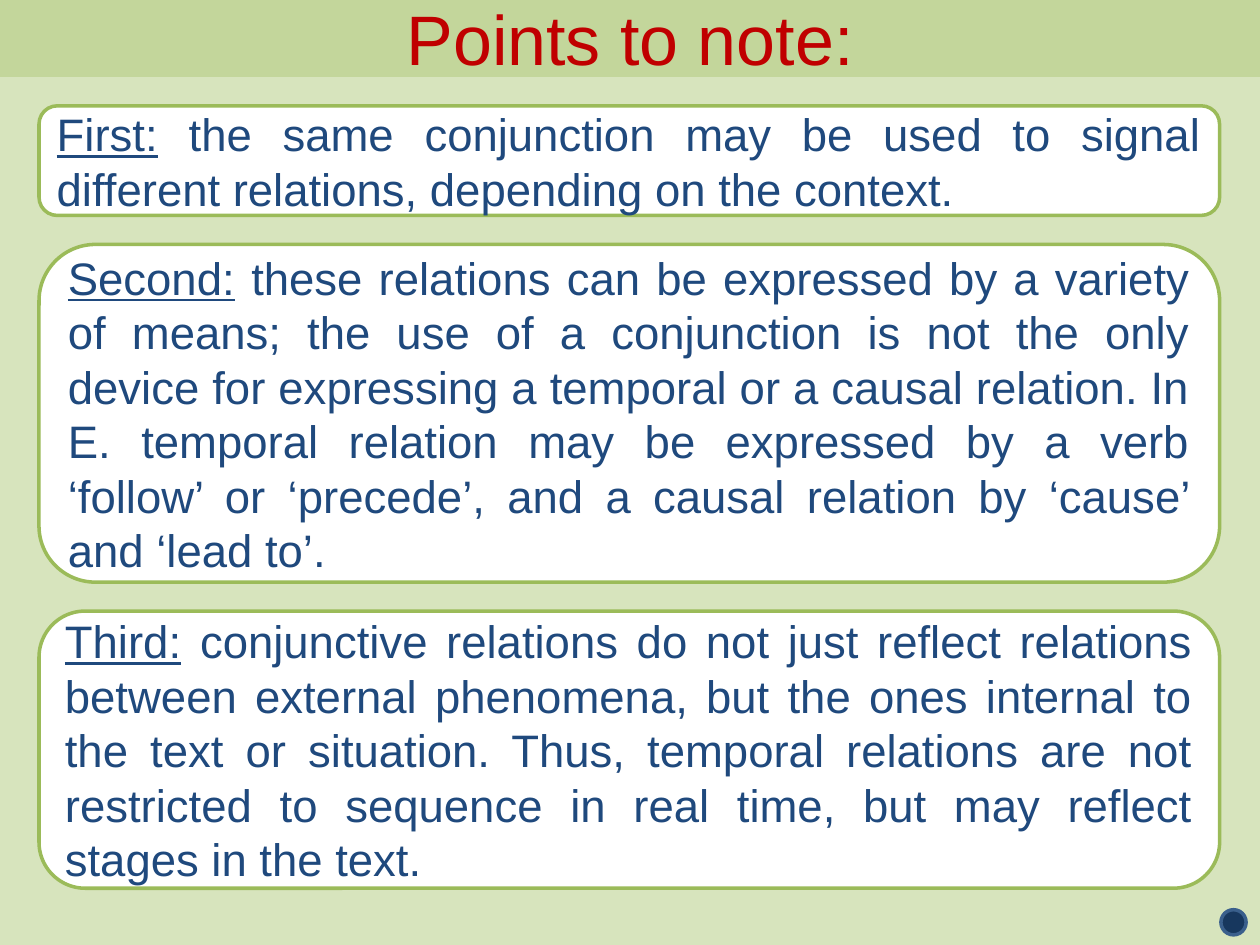
from pptx import Presentation
from pptx.dml.color import RGBColor
from pptx.enum.shapes import MSO_SHAPE
from pptx.enum.text import MSO_ANCHOR, MSO_AUTO_SIZE, PP_ALIGN
from pptx.util import Inches, Pt

TITLE = "Points to note:"
POINTS = [
    ("First:", " the same conjunction may be used to signal different relations, "
     "depending on the context.", 0.87),
    ("Second:", " these relations can be expressed by a variety of means; the use of "
     "a conjunction is not the only device for expressing a temporal or a causal "
     "relation. In E. temporal relation may be expressed by a verb ‘follow’ or "
     "‘precede’, and a causal relation by ‘cause’ and ‘lead to’.", 2.68),
    ("Third:", " conjunctive relations do not just reflect relations between external "
     "phenomena, but the ones internal to the text or situation. Thus, temporal "
     "relations are not restricted to sequence in real time, but may reflect stages "
     "in the text.", 2.2),
]
THEME = {
    "font": "Arial", "title_size": 40, "body_size": 26, "line_width": 2,
    "background": "D7E4BD", "band": "C3D69B", "title": "C00000",
    "card": "FFFFFF", "border": "9BBB59", "text": "1F497D",
    "dot": "17375E", "dot_border": "3A5F8C",
}
PAGE_WIDTH, PAGE_HEIGHT = 10, 7.5
CARD_LEFT, CARD_WIDTH, FIRST_TOP, GAP = 0.31, 9.37, 0.84, 0.23


def color(name):
    return RGBColor.from_string(THEME[name])


def paint(shape, fill, line):
    shape.fill.solid()
    shape.fill.fore_color.rgb = color(fill)
    shape.line.color.rgb = color(line)
    shape.line.width = Pt(THEME["line_width"])


def add_shape(page, kind, left, top, width, height, fill, line):
    shape = page.shapes.add_shape(
        kind, Inches(left), Inches(top), Inches(width), Inches(height))
    shape.shadow.inherit = False
    paint(shape, fill, line)
    return shape


def format_text(frame, size, ink, alignment):
    frame.word_wrap = True
    frame.auto_size = MSO_AUTO_SIZE.NONE
    frame.vertical_anchor = MSO_ANCHOR.MIDDLE
    para = frame.paragraphs[0]
    para.alignment = alignment
    para.font.name = THEME["font"]
    para.font.size = Pt(THEME[size])
    para.font.color.rgb = color(ink)
    return para


def add_title(page):
    title = page.shapes.title
    title.left, title.top = Inches(0), Inches(0)
    title.width, title.height = Inches(PAGE_WIDTH), Inches(0.6)
    paint(title, "band", "band")
    title.text_frame.text = TITLE
    format_text(title.text_frame, "title_size", "title", PP_ALIGN.CENTER)


def add_points(page):
    top = FIRST_TOP
    for label, body, height in POINTS:
        card = add_shape(page, MSO_SHAPE.ROUNDED_RECTANGLE, CARD_LEFT, top,
                         CARD_WIDTH, height, "card", "border")
        para = format_text(card.text_frame, "body_size", "text", PP_ALIGN.JUSTIFY)
        span = para.add_run()
        span.text = label
        span.font.underline = True
        para.add_run().text = body
        top += height + GAP


def main():
    deck = Presentation()
    deck.slide_width, deck.slide_height = Inches(PAGE_WIDTH), Inches(PAGE_HEIGHT)
    page = deck.slides.add_slide(deck.slide_layouts[5])
    page.background.fill.solid()
    page.background.fill.fore_color.rgb = color("background")
    add_title(page)
    add_points(page)
    add_shape(page, MSO_SHAPE.OVAL, 9.69, 7.22, 0.2, 0.2, "dot", "dot_border")
    deck.save("out.pptx")


if __name__ == "__main__":
    main()
